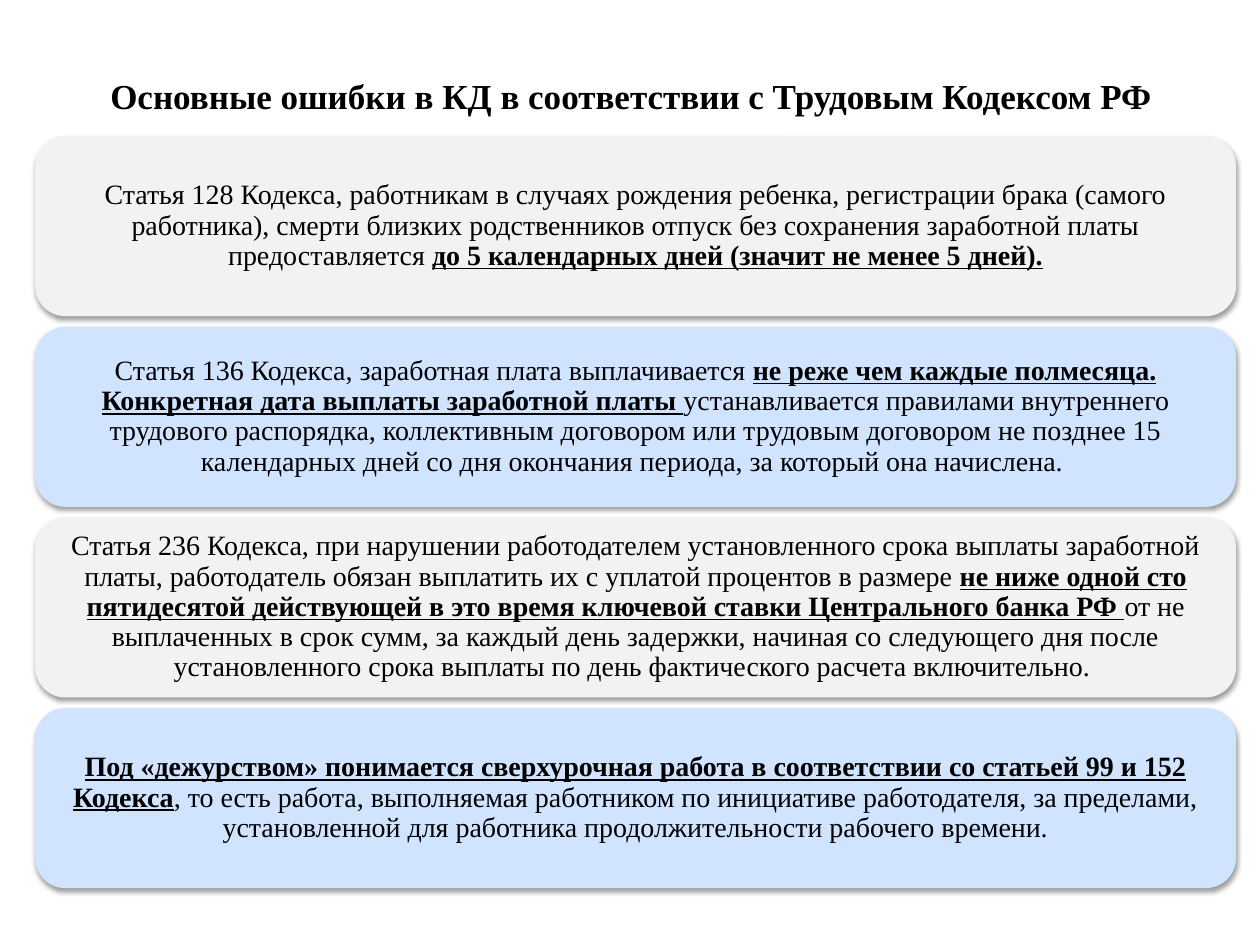
from lxml.etree import SubElement
from pptx import Presentation
from pptx.dml.color import RGBColor
from pptx.enum.shapes import MSO_SHAPE
from pptx.enum.text import MSO_ANCHOR, PP_ALIGN
from pptx.oxml.ns import qn
from pptx.util import Inches, Pt

TITLE = "Основные ошибки в КД в соответствии с Трудовым Кодексом РФ"
ARTICLES = [
    [("Статья 128 Кодекса, работникам в случаях рождения ребенка, регистрации брака "
      "(самого работника), смерти близких родственников отпуск без сохранения "
      "заработной платы предоставляется ", False),
     ("до 5 календарных дней (значит не менее 5 дней).", True)],
    [("Статья 136 Кодекса, заработная плата выплачивается ", False),
     ("не реже чем каждые полмесяца. Конкретная дата выплаты заработной платы ", True),
     ("устанавливается правилами внутреннего трудового распорядка, коллективным "
      "договором или трудовым договором не позднее 15 календарных дней со дня "
      "окончания периода, за который она начислена. ", False)],
    [("Статья 236 Кодекса, при нарушении работодателем установленного срока выплаты "
      "заработной платы, работодатель обязан выплатить их с уплатой процентов в "
      "размере ", False),
     ("не ниже одной сто пятидесятой действующей в это время ключевой ставки "
      "Центрального банка РФ ", True),
     ("от не выплаченных в срок сумм, за каждый день задержки, начиная со следующего "
      "дня после установленного срока выплаты по день фактического расчета "
      "включительно. ", False)],
    [("Под «дежурством» понимается сверхурочная работа в соответствии со статьей "
      "99 и 152 Кодекса", True),
     (", то есть работа, выполняемая работником по инициативе работодателя, за "
      "пределами, установленной для работника продолжительности рабочего времени.",
      False)],
]
CARD_FILLS = ["F2F2F2", "D1E4FF"]
CARD_TOP, CARD_PITCH = 1.08, 1.513


def color(value):
    return RGBColor.from_string(value)


class SlideBuilder:
    """Holds the text style and the current slide, and adds its elements."""

    font = "Times New Roman"
    ink = "000000"

    def __init__(self, s):
        self.s = s

    def style(self, r, size, bold, underline=False):
        r.font.name = self.font
        r.font.size = Pt(size)
        r.font.color.rgb = color(self.ink)
        r.font.bold = bold
        r.font.underline = underline

    def frame(self, sp):
        tf = sp.text_frame
        tf.word_wrap = True
        tf.vertical_anchor = MSO_ANCHOR.MIDDLE
        tf.paragraphs[0].alignment = PP_ALIGN.CENTER
        return tf

    def title(self, text, left, top, width, height):
        sp = self.s.shapes.add_textbox(*map(Inches, (left, top, width, height)))
        p = self.frame(sp).paragraphs[0]
        p.text = text
        self.style(p.runs[0], 20, True)

    def shadow(self, sp):
        sp.shadow.inherit = False
        effects = sp._element.spPr.find(qn("a:effectLst"))
        outer = SubElement(effects, qn("a:outerShdw"), blurRad=str(Pt(3.1)),
                           dist=str(Pt(1.6)), dir="5400000", rotWithShape="0")
        tint = SubElement(outer, qn("a:srgbClr"), val=self.ink)
        SubElement(tint, qn("a:alpha"), val="38000")

    def card(self, parts, fill, left, top, width, height):
        sp = self.s.shapes.add_shape(MSO_SHAPE.ROUNDED_RECTANGLE,
                                     *map(Inches, (left, top, width, height)))
        sp.fill.solid()
        sp.fill.fore_color.rgb = color(fill)
        sp.line.fill.background()
        self.shadow(sp)
        tf = self.frame(sp)
        tf.margin_left = tf.margin_right = Inches(0.07)
        tf.margin_top = tf.margin_bottom = Inches(0.07)
        p = tf.paragraphs[0]
        p.line_spacing = 0.9
        for text, strong in parts:
            r = p.add_run()
            r.text = text
            self.style(r, 16, strong, strong)


def main():
    prs = Presentation()
    prs.slide_width, prs.slide_height = Inches(10), Inches(7.5)
    builder = SlideBuilder(prs.slides.add_slide(prs.slide_layouts[6]))
    builder.title(TITLE, 0.51, 0.13, 9, 1.25)
    for i, parts in enumerate(ARTICLES):
        builder.card(parts, CARD_FILLS[i % 2], 0.28, CARD_TOP + i * CARD_PITCH, 9.53, 1.43)
    prs.save("out.pptx")


if __name__ == "__main__":
    main()
